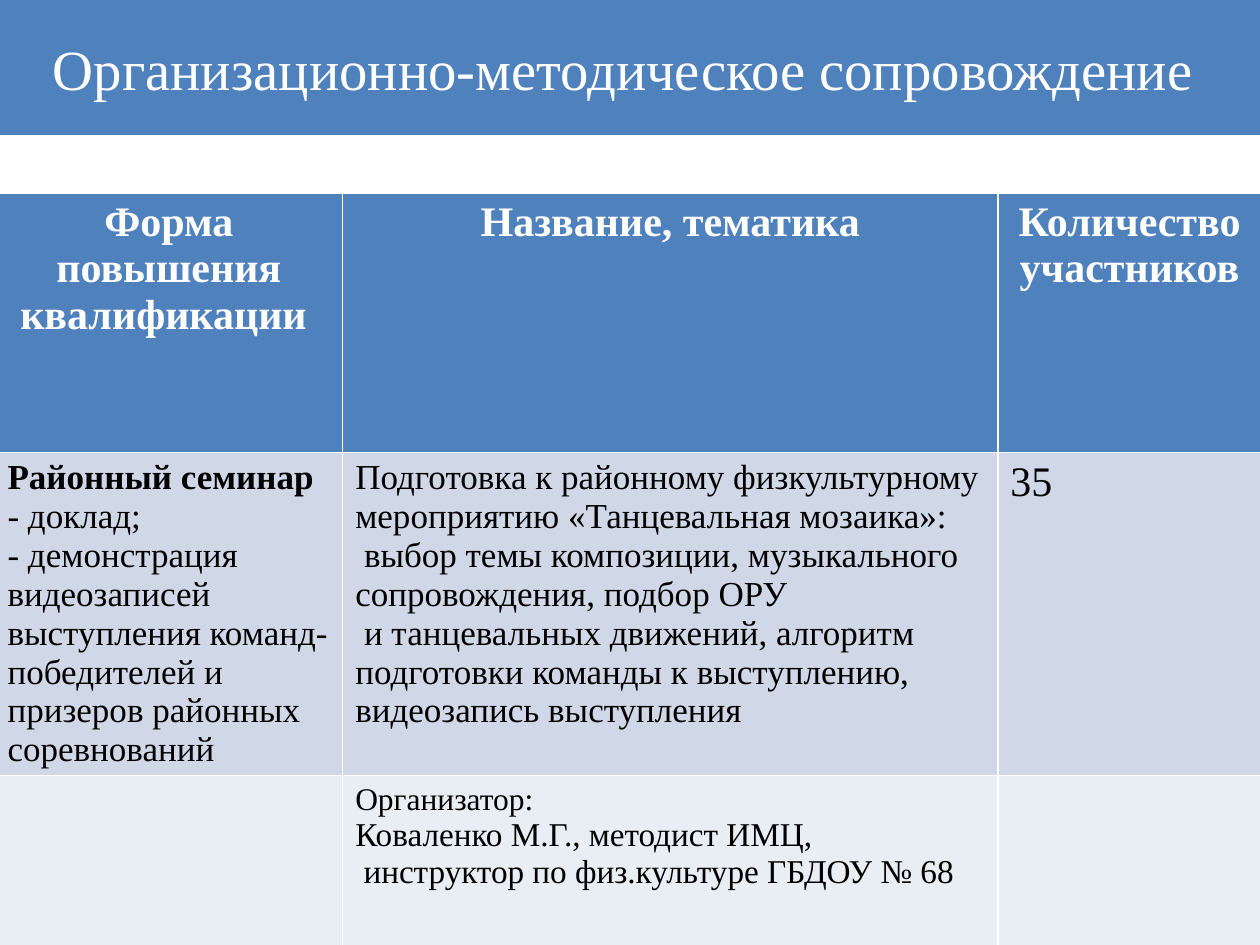
from pptx import Presentation
from pptx.dml.color import RGBColor
from pptx.enum.text import MSO_ANCHOR, MSO_AUTO_SIZE, PP_ALIGN
from pptx.util import Inches, Pt

FONT = "Times New Roman"
WHITE, BLACK, BLUE = "FFFFFF", "000000", "4F81BD"
TITLE = "Организационно-методическое сопровождение "
COLUMN_WIDTHS = [2.76, 5.2, 2.09]
ROW_HEIGHTS = [2.06, 1.99, 1.99]
ROW_FILLS = [BLUE, "D0D8E8", "E9EDF4"]
# Each cell is a list of (text, size, bold) paragraphs.
ROWS = [
    [
        [("Форма повышения квалификации ", 24, True)],
        [("Название, тематика", 24, True)],
        [("Количество участников", 24, True)],
    ],
    [
        [
            ("Районный семинар", 20, True),
            ("- доклад;", 20, False),
            ("- демонстрация видеозаписей выступления команд- победителей "
             "и призеров районных соревнований", 20, False),
        ],
        [
            ("Подготовка к районному физкультурному мероприятию "
             "«Танцевальная мозаика»:", 20, False),
            (" выбор темы композиции, музыкального сопровождения, подбор ОРУ", 20, False),
            (" и танцевальных движений, алгоритм подготовки команды к выступлению, "
             "видеозапись выступления", 20, False),
        ],
        [("35", 24, False)],
    ],
    [
        [],
        [
            ("Организатор:", 18, False),
            ("Коваленко М.Г., методист ИМЦ,", 19, False),
            (" инструктор по физ.культуре ГБДОУ № 68", 19, False),
        ],
        [],
    ],
]


def paint(fill, color):
    fill.solid()
    fill.fore_color.rgb = RGBColor.from_string(color)


def write(frame, paragraphs, color, alignment):
    for index, (text, size, bold) in enumerate(paragraphs):
        paragraph = frame.paragraphs[0] if index == 0 else frame.add_paragraph()
        paragraph.text = text
        paragraph.alignment = alignment
        font = paragraph.font
        font.name, font.size, font.bold = FONT, Pt(size), bold
        font.color.rgb = RGBColor.from_string(color)


def add_title(slide, width):
    title = slide.shapes.title
    title.left, title.top, title.width, title.height = 0, 0, width, Inches(1.07)
    paint(title.fill, BLUE)
    frame = title.text_frame
    frame.auto_size = MSO_AUTO_SIZE.NONE
    frame.vertical_anchor = MSO_ANCHOR.MIDDLE
    write(frame, [(TITLE, 32.4, False)], WHITE, PP_ALIGN.CENTER)


def add_training_table(slide):
    table = slide.shapes.add_table(
        len(ROWS), len(COLUMN_WIDTHS), Inches(-0.04), Inches(1.53),
        Inches(sum(COLUMN_WIDTHS)), Inches(sum(ROW_HEIGHTS))).table
    for column, width in zip(table.columns, COLUMN_WIDTHS):
        column.width = Inches(width)
    for row_index, (row, height) in enumerate(zip(table.rows, ROW_HEIGHTS)):
        row.height = Inches(height)
        header = row_index == 0
        color = WHITE if header else BLACK
        alignment = PP_ALIGN.CENTER if header else PP_ALIGN.LEFT
        for cell, paragraphs in zip(row.cells, ROWS[row_index]):
            paint(cell.fill, ROW_FILLS[row_index])
            write(cell.text_frame, paragraphs, color, alignment)


def main():
    """Build the slide on methodological support and save it."""
    presentation = Presentation()
    presentation.slide_width, presentation.slide_height = Inches(10), Inches(7.5)
    slide = presentation.slides.add_slide(presentation.slide_layouts[5])
    add_title(slide, presentation.slide_width)
    add_training_table(slide)
    presentation.save("out.pptx")


if __name__ == "__main__":
    main()
